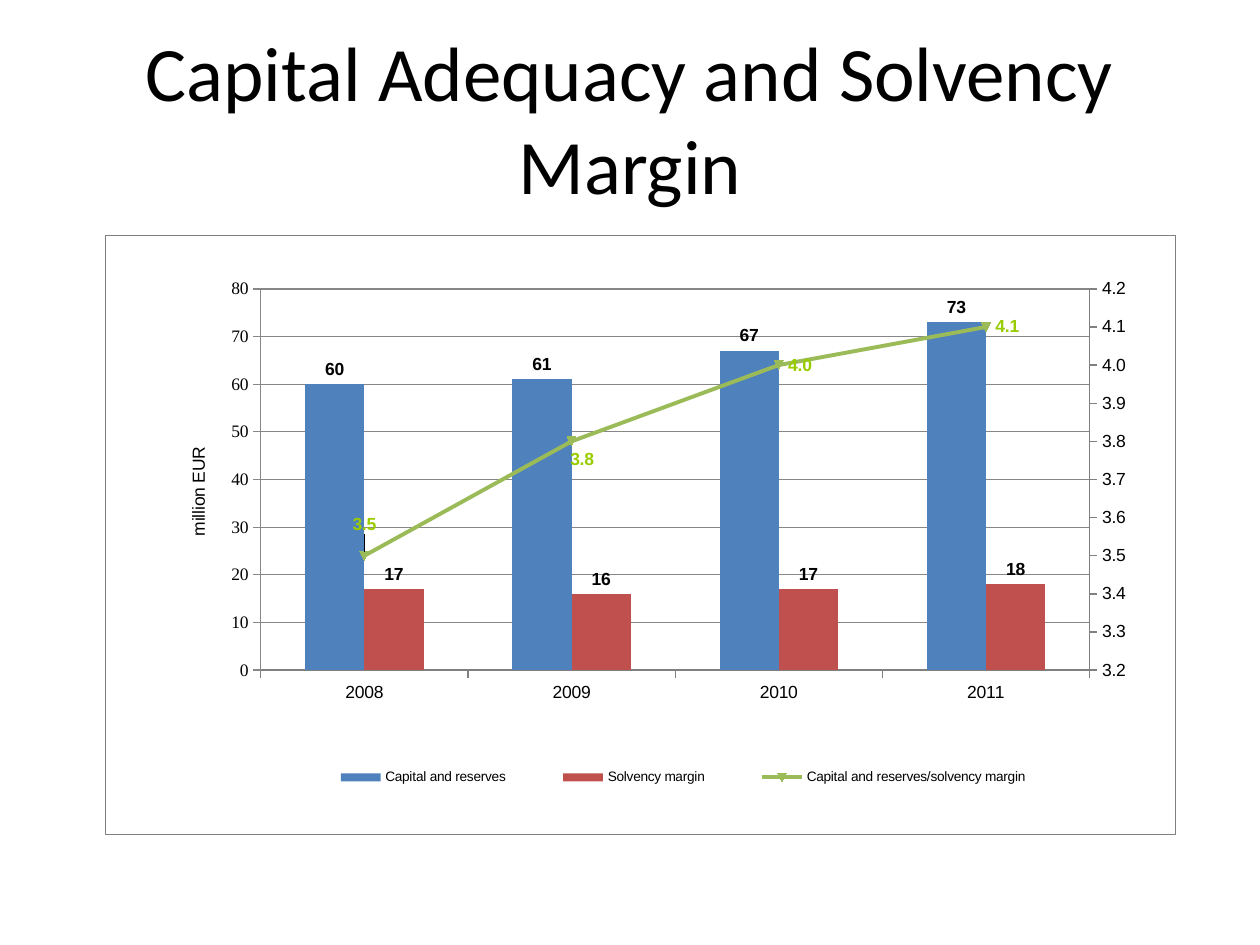
from pptx import Presentation
from pptx.chart.axis import ValueAxis
from pptx.chart.data import CategoryChartData
from pptx.dml.color import RGBColor
from pptx.enum.chart import XL_CHART_TYPE as Kind, XL_LABEL_POSITION as Spot
from pptx.enum.chart import XL_LEGEND_POSITION as Side, XL_MARKER_STYLE as Mark
from pptx.enum.chart import XL_TICK_MARK as Tick
from pptx.enum.dml import MSO_LINE as Dash
from pptx.enum.text import MSO_ANCHOR as Anchor, PP_ALIGN as Align
from pptx.oxml import parse_xml
from pptx.oxml.ns import nsdecls, qn
from pptx.util import Pt

PX = 914400 / 126
BLACK = RGBColor(0x00, 0x00, 0x00)
GREY = RGBColor(0x80, 0x80, 0x80)
BLUE = RGBColor(0x4F, 0x81, 0xBD)
RED = RGBColor(0xC0, 0x50, 0x4D)
GREEN = RGBColor(0x9B, 0xBB, 0x59)
LIME = RGBColor(0x99, 0xCC, 0x00)


def write(frame, text, font="Arial", size=10, color=BLACK, bold=False, align=Align.CENTER):
    """Fill a text frame; with no text, format the font object given."""
    face = frame
    if text:
        frame.text = text
        para = frame.paragraphs[0]
        para.alignment = align
        face = para.runs[0].font
    face.name, face.size, face.bold = font, Pt(size), bold
    face.color.rgb = color


def layout(x, y, w=None, h=None, inner=False, shift=False):
    """Manual layout in fractions of the chart."""
    tags = '<c:layoutTarget val="inner"/>' if inner else ""
    if not shift:
        tags += '<c:xMode val="edge"/><c:yMode val="edge"/>'
    for key, val in zip("xywh", (x, y, w, h)):
        if val is not None:
            tags += f'<c:{key} val="{val}"/>'
    return parse_xml(f'<c:layout {nsdecls("c")}><c:manualLayout>{tags}'
                     '</c:manualLayout></c:layout>')


deck = Presentation()
deck.slide_width, deck.slide_height = round(1260 * PX), round(945 * PX)
slide = deck.slides.add_slide(deck.slide_layouts[6])

# Title
box = slide.shapes.add_textbox(*[round(n * PX) for n in (63, 38, 1134, 158)])
box.text_frame.word_wrap = True
box.text_frame.vertical_anchor = Anchor.MIDDLE
write(box.text_frame, "Capital Adequacy and Solvency Margin", font="Calibri", size=44)

# Chart data
data = CategoryChartData()
data.categories = ["2008", "2009", "2010", "2011"]
data.add_series("Capital and reserves", (60, 61, 67, 73), "#,##0")
data.add_series("Solvency margin", (17, 16, 17, 18), "#,##0")
data.add_series("Capital and reserves/solvency margin", (3.5, 3.8, 4.0, 4.1), "#,##0.0")
spot = [round(n * PX) for n in (105, 235, 1071, 600)]
chart = slide.shapes.add_chart(Kind.COLUMN_CLUSTERED, *spot, data).chart
chart.has_title = False
write(chart.font, "", font="Times New Roman")

# Frame and plot area
root = chart._chartSpace
root.find(qn("c:txPr")).addprevious(parse_xml(
    f'<c:spPr {nsdecls("c", "a")}><a:solidFill><a:srgbClr val="FFFFFF"/></a:solidFill>'
    f'<a:ln w="9525"><a:solidFill><a:srgbClr val="{GREY}"/></a:solidFill></a:ln></c:spPr>'))
area = root.find(qn("c:chart")).find(qn("c:plotArea"))
for old in area.findall(qn("c:layout")):
    area.remove(old)
area.insert(0, layout(0.145, 0.089, 0.775, 0.637, inner=True))

# Ratio series as a line on a second axis
bars = area.find(qn("c:barChart"))
ratio = bars.findall(qn("c:ser"))[2]
for old in ratio.findall(qn("c:invertIfNegative")):
    ratio.remove(old)
line = parse_xml(
    f'<c:lineChart {nsdecls("c")}><c:grouping val="standard"/><c:varyColors val="0"/>'
    '<c:marker val="1"/><c:axId val="501"/><c:axId val="502"/></c:lineChart>')
line.find(qn("c:marker")).addprevious(ratio)
bars.addnext(line)
axes = [
    ("catAx", 501, 502, 1, "b", "autoZero"),
    ("valAx", 502, 501, 0, "r", "max"),
]
last = area.find(qn("c:valAx"))
for tag, own, other, gone, side, cross in axes:
    axis = parse_xml(
        f'<c:{tag} {nsdecls("c")}><c:axId val="{own}"/>'
        '<c:scaling><c:orientation val="minMax"/></c:scaling>'
        f'<c:delete val="{gone}"/><c:axPos val="{side}"/>'
        '<c:majorTickMark val="out"/><c:minorTickMark val="none"/>'
        '<c:tickLblPos val="nextTo"/>'
        f'<c:crossAx val="{other}"/><c:crosses val="{cross}"/></c:{tag}>')
    last.addnext(axis)
    last = axis

# Axes
left, right, base = chart.value_axis, ValueAxis(last), chart.category_axis
for axis in (left, right, base):
    axis.major_tick_mark = Tick.OUTSIDE
    axis.format.line.color.rgb = GREY
    axis.format.line.width = Pt(0.75)
    write(axis.tick_labels.font, "")
scales = [(left, 0, 80, 10, "#,##0"), (right, 3.2, 4.2, 0.1, "0.0")]
for axis, low, high, step, form in scales:
    axis.minimum_scale, axis.maximum_scale, axis.major_unit = low, high, step
    axis.tick_labels.number_format = form
    axis.tick_labels.number_format_is_linked = False
base.has_major_gridlines = right.has_major_gridlines = False
grid = left.major_gridlines.format.line
grid.color.rgb, grid.width, grid.dash_style = GREY, Pt(0.75), Dash.ROUND_DOT
write(left.axis_title.text_frame, "million EUR")
title = left.axis_title._element
for old in title.findall(qn("c:layout")):
    title.remove(old)
title.find(qn("c:tx")).addnext(layout(0.073, 0.348))
title.find(".//" + qn("a:bodyPr")).set("rot", "-5400000")

# Series and their labels
cols, curve = chart.plots
cols.gap_width, cols.overlap = 150, 0
cols.vary_by_categories = False
track = curve.series[0]
looks = [
    (cols.series[0], BLACK, Spot.OUTSIDE_END, "#,##0"),
    (cols.series[1], BLACK, Spot.OUTSIDE_END, "#,##0"),
    (track, LIME, Spot.RIGHT, "#,##0.0"),
]
for ser, ink, place, form in looks:
    tags = ser.data_labels
    tags.show_value, tags.position = True, place
    tags.number_format, tags.number_format_is_linked = form, False
    write(tags.font, "", color=ink, bold=True)
for ser, hue in zip(cols.series, (BLUE, RED)):
    ser.format.fill.solid()
    ser.format.fill.fore_color.rgb = hue
track.smooth = False
track.format.line.color.rgb, track.format.line.width = GREEN, Pt(2.25)
track.marker.style, track.marker.size = Mark.AUTOMATIC, 5
track.marker.format.fill.solid()
track.marker.format.fill.fore_color.rgb = GREEN
track.marker.format.line.color.rgb = GREEN
shifts = [(Spot.ABOVE, 0, -0.02), (Spot.RIGHT, -0.01, 0.03)]
for num, (place, dx, dy) in enumerate(shifts):
    tag = track.points[num].data_label
    write(tag.font, "", color=LIME, bold=True)
    tag.position = place
    item = track.data_labels._element.findall(qn("c:dLbl"))[num]
    item.find(qn("c:idx")).addnext(layout(dx, dy, shift=True))

# Legend
chart.has_legend = True
legend = chart.legend
legend.position, legend.include_in_layout = Side.BOTTOM, False
write(legend.font, "", size=7.8)
for old in legend._element.findall(qn("c:layout")):
    legend._element.remove(old)
legend._element.find(qn("c:legendPos")).addnext(layout(0.17, 0.87, 0.74, 0.07))

deck.save("out.pptx")
